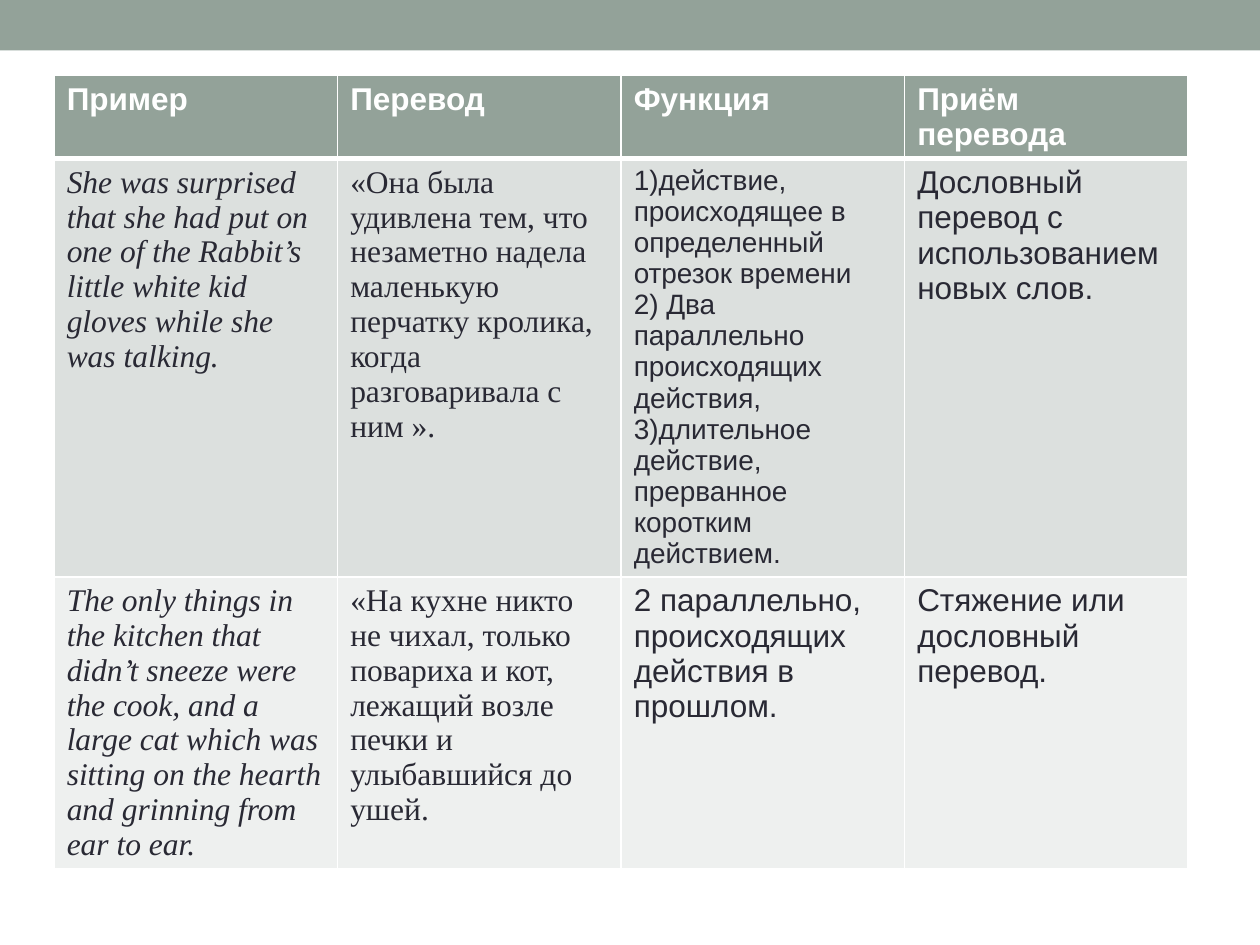
from dataclasses import dataclass
from typing import Any

from lxml import etree
from pptx import Presentation
from pptx import util as u
from pptx.dml.color import RGBColor
from pptx.enum import shapes
from pptx.oxml import ns

SAGE, WHITE, INK = "93A299", "FFFFFF", "292934"
HEADER = {"name": "Arial", "size": u.Pt(18), "bold": True, "italic": False}
PLAIN = {**HEADER, "bold": False}
SMALL = {**PLAIN, "size": u.Pt(16)}
SERIF = {**PLAIN, "name": "Times New Roman"}
EXAMPLE = {**SERIF, "italic": True}

ROWS = [
    {
        "height": 0.65, "fill": SAGE, "color": WHITE, "bottom": 3,
        "cells": [
            ("Пример", HEADER),
            ("Перевод", HEADER),
            ("Функция", HEADER),
            ("Приём перевода", HEADER),
        ],
    },
    {
        "height": 3.32, "fill": "DCE0DE", "color": INK, "bottom": 1,
        "cells": [
            ("She was surprised that she had put on one of the Rabbit’s little "
             "white kid gloves while she was talking.", EXAMPLE),
            ("«Она была удивлена тем, что незаметно надела маленькую перчатку "
             "кролика, когда разговаривала с ним ».", SERIF),
            ("1)действие, происходящее в определенный отрезок времени\n"
             "2) Два параллельно происходящих действия,\n"
             "3)длительное действие, прерванное коротким действием.", SMALL),
            ("Дословный перевод с использованием новых слов.", PLAIN),
        ],
    },
    {
        "height": 2.31, "fill": "EEF0EF", "color": INK, "bottom": 1,
        "cells": [
            ("The only things in the kitchen that didn’t sneeze were the cook, "
             "and a large cat which was sitting on the hearth and grinning from "
             "ear to ear.", EXAMPLE),
            ("«На кухне никто не чихал, только повариха и кот, лежащий возле "
             "печки и улыбавшийся до ушей.", SERIF),
            ("2 параллельно, происходящих действия в прошлом.", PLAIN),
            ("Стяжение или дословный перевод.", PLAIN),
        ],
    },
]


def paint(target, color):
    target.solid()
    target.fore_color.rgb = RGBColor.from_string(color)


@dataclass
class SlideBuilder:
    """Draws styled elements on the current slide."""

    slide: Any
    border: str = WHITE

    def band(self, left, top, width, height, color):
        box = map(u.Inches, (left, top, width, height))
        shape = self.slide.shapes.add_shape(shapes.MSO_SHAPE.RECTANGLE, *box)
        shape.shadow.inherit = False
        paint(shape.fill, color)
        shape.line.fill.background()

    def borders(self, cell, widths):
        properties = cell._tc.get_or_add_tcPr()
        for index, (side, width) in enumerate(widths.items()):
            line = etree.Element(ns.qn(f"a:ln{side}"), w=str(u.Pt(width)))
            fill = etree.SubElement(line, ns.qn("a:solidFill"))
            etree.SubElement(fill, ns.qn("a:srgbClr"), val=self.border)
            properties.insert(index, line)

    def cell_text(self, cell, content, style, color):
        cell.text = content
        for paragraph in cell.text_frame.paragraphs:
            font = paragraph.runs[0].font
            for name, value in style.items():
                setattr(font, name, value)
            paint(font.fill, color)

    def table(self, left, top, width, rows):
        columns = len(rows[0]["cells"])
        height = sum(row["height"] for row in rows)
        box = map(u.Inches, (left, top, width, height))
        table = self.slide.shapes.add_table(len(rows), columns, *box).table
        above = 1
        for index, row in enumerate(rows):
            table.rows[index].height = u.Inches(row["height"])
            widths = {"L": 1, "R": 1, "T": above, "B": row["bottom"]}
            for column, (content, style) in enumerate(row["cells"]):
                cell = table.cell(index, column)
                paint(cell.fill, row["fill"])
                self.borders(cell, widths)
                self.cell_text(cell, content, style, row["color"])
            above = row["bottom"]


def main():
    presentation = Presentation()
    presentation.slide_width = u.Inches(10)
    presentation.slide_height = u.Inches(7.5)
    builder = SlideBuilder(presentation.slides.add_slide(presentation.slide_layouts[6]))
    builder.band(0, 0, 10, 0.4, SAGE)
    builder.table(0.43, 0.6, 9, ROWS)
    presentation.save("out.pptx")


if __name__ == "__main__":
    main()
